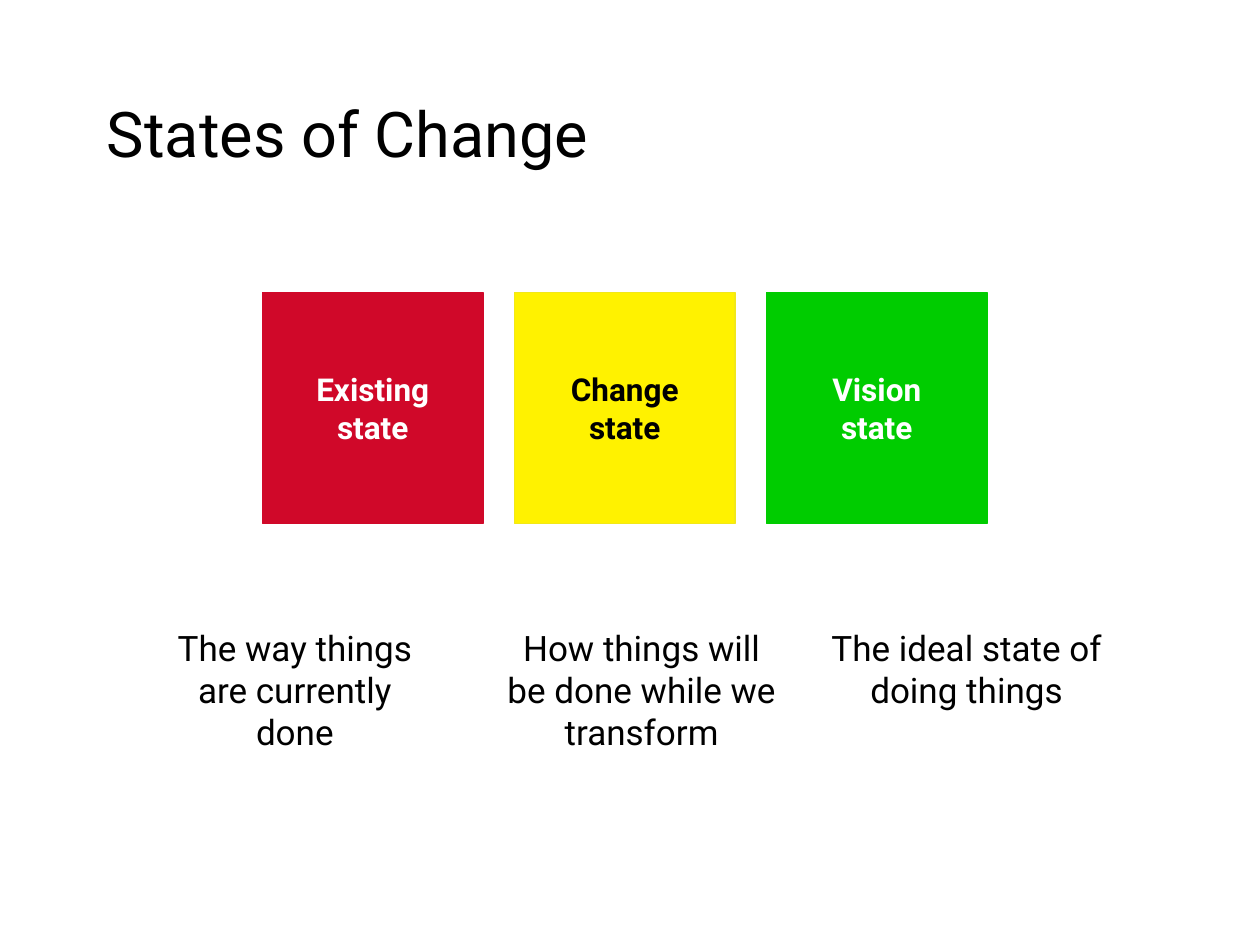
from pptx import Presentation
from pptx.dml.color import RGBColor
from pptx.enum import shapes, text
from pptx.util import Cm, Pt

BLACK = RGBColor(0x00, 0x00, 0x00)
WHITE = RGBColor(0xFF, 0xFF, 0xFF)
RED = RGBColor(0xD0, 0x08, 0x29)
YELLOW = RGBColor(0xFF, 0xF2, 0x00)
DARK_YELLOW = RGBColor(0xF2, 0xE8, 0x18)
GREEN = RGBColor(0x00, 0xCC, 0x00)

TITLE = "States of Change"
# label lines, fill, outline, label colour, caption, caption left (cm)
STATES = [
    (["Existing", "state"], RED, RED, WHITE,
     "The way things are currently done", 2.97),
    (["Change", "state"], YELLOW, DARK_YELLOW, BLACK,
     "How things will be done while we transform", 9.96),
    (["Vision", "state"], GREEN, GREEN, WHITE,
     "The ideal state of doing things", 16.51),
]
SQUARE_LEFT, SQUARE_TOP, SQUARE_PITCH = 5.29, 5.9, 5.08
SQUARE_WIDTH, SQUARE_HEIGHT = 4.45, 4.65
CAPTION_TOP, CAPTION_WIDTH, CAPTION_HEIGHT = 12.5, 5.95, 2.82


def write(tf, lines, size, color, align, anchor, bold=False):
    """Fill a text frame with one formatted paragraph per line."""
    tf.word_wrap = True
    tf.vertical_anchor = anchor
    font = {"name": "Roboto", "size": Pt(size), "bold": bold}
    for i, line in enumerate(lines):
        p = tf.add_paragraph() if i else tf.paragraphs[0]
        p.alignment = align
        r = p.add_run()
        r.text = line
        for name, value in font.items():
            setattr(r.font, name, value)
        r.font.color.rgb = color


def main():
    prs = Presentation()
    prs.slide_width, prs.slide_height = Cm(25.4), Cm(19.05)
    s = prs.slides.add_slide(prs.slide_layouts.get_by_name("Title Only"))
    align, anchor = text.PP_ALIGN, text.MSO_ANCHOR

    title = s.shapes.title
    title.left, title.top = Cm(1.9), Cm(1.07)
    title.width, title.height = Cm(21.6), Cm(3.18)
    write(title.text_frame, [TITLE], 36, BLACK, align.LEFT, anchor.MIDDLE)

    for i, (label, fill, outline, color, caption, left) in enumerate(STATES):
        square = s.shapes.add_shape(
            shapes.MSO_SHAPE.RECTANGLE,
            Cm(SQUARE_LEFT + i * SQUARE_PITCH), Cm(SQUARE_TOP),
            Cm(SQUARE_WIDTH), Cm(SQUARE_HEIGHT))
        square.shadow.inherit = False
        square.fill.solid()
        square.fill.fore_color.rgb = fill
        square.line.color.rgb = outline
        square.line.width = Pt(0.75)
        write(square.text_frame, label, 18, color,
              align.CENTER, anchor.MIDDLE, bold=True)

        box = s.shapes.add_textbox(Cm(left), Cm(CAPTION_TOP),
                                   Cm(CAPTION_WIDTH), Cm(CAPTION_HEIGHT))
        write(box.text_frame, [caption], 20, BLACK, align.CENTER, anchor.TOP)

    prs.save("out.pptx")


if __name__ == "__main__":
    main()
